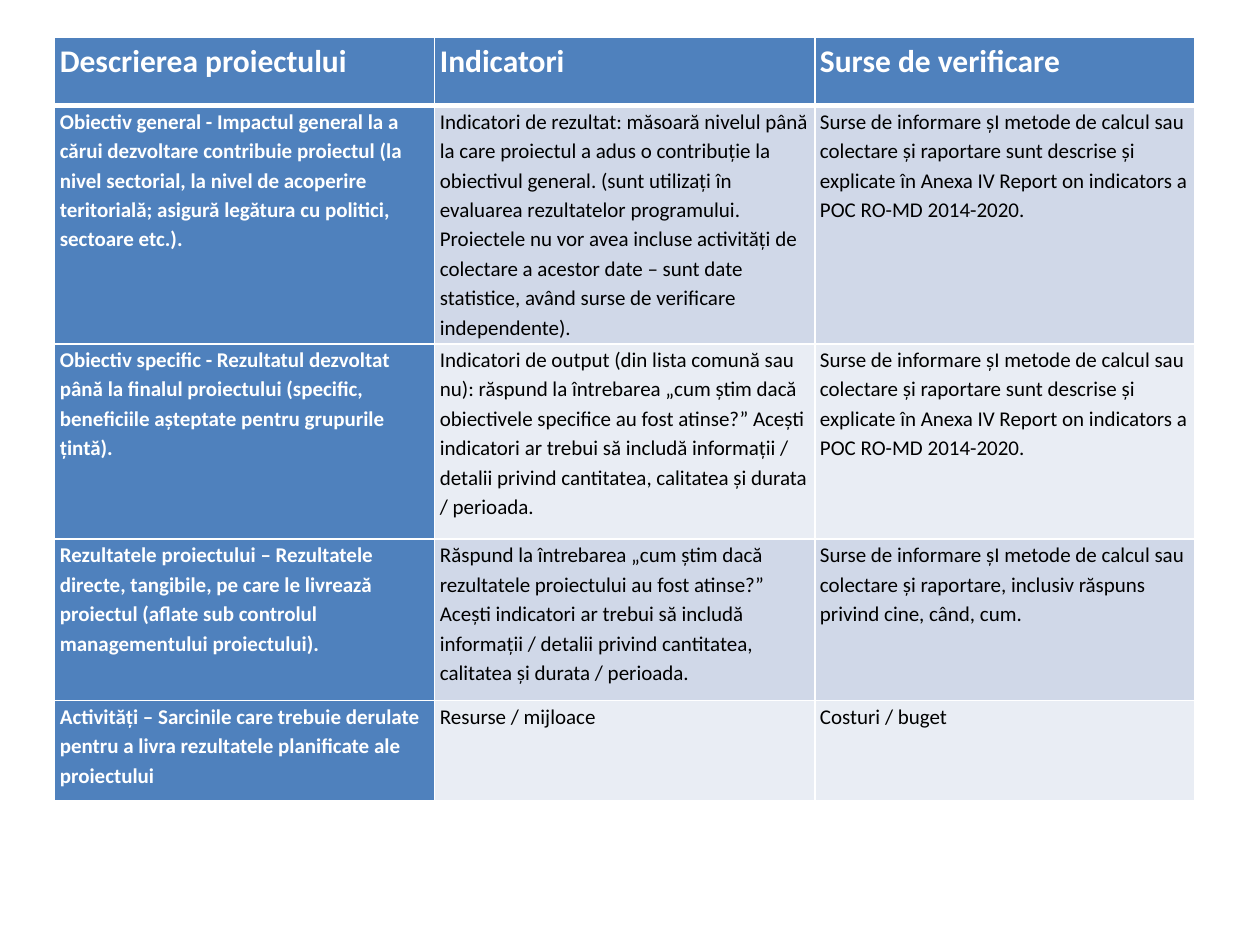
import pptx
import pptx.dml.color
import pptx.oxml
import pptx.oxml.ns
import pptx.util

Pt = pptx.util.Pt
RGBColor = pptx.dml.color.RGBColor

WHITE = RGBColor(0xFF, 0xFF, 0xFF)
BLACK = RGBColor(0x00, 0x00, 0x00)
BLUE = RGBColor(0x4F, 0x81, 0xBD)
BAND_DARK = RGBColor(0xD0, 0xD8, 0xE8)
BAND_LIGHT = RGBColor(0xE9, 0xED, 0xF4)

COLUMN_WIDTH = 217.2
ROW_HEIGHTS = [39.3, 136.2, 111.6, 92.2, 57.6]
# Cells (row, column) whose paragraph has no space after it
TIGHT_CELLS = {(1, 2), (3, 0), (4, 0)}

INDICATOR_SOURCES = (
    "Surse de informare șI metode de calcul sau colectare și raportare sunt "
    "descrise și explicate în Anexa IV Report on indicators a POC RO-MD 2014-2020."
)
ROWS = [
    ["Descrierea proiectului", "Indicatori", "Surse de verificare"],
    [
        "Obiectiv general - Impactul general la a cărui dezvoltare contribuie "
        "proiectul (la nivel sectorial, la nivel de acoperire teritorială; "
        "asigură legătura cu politici, sectoare etc.).",
        "Indicatori de rezultat: măsoară nivelul până la care proiectul a adus o "
        "contribuție la obiectivul general. (sunt utilizați în evaluarea "
        "rezultatelor programului. Proiectele nu vor avea incluse activități de "
        "colectare a acestor date – sunt date statistice, având surse de "
        "verificare independente).",
        INDICATOR_SOURCES,
    ],
    [
        "Obiectiv specific - Rezultatul dezvoltat până la finalul proiectului "
        "(specific, beneficiile așteptate pentru grupurile țintă).",
        "Indicatori de output (din lista comună sau nu): răspund la întrebarea "
        "„cum știm dacă obiectivele specifice au fost atinse?” Acești indicatori "
        "ar trebui să includă informații / detalii privind cantitatea, calitatea "
        "și durata / perioada.",
        INDICATOR_SOURCES,
    ],
    [
        "Rezultatele proiectului – Rezultatele directe, tangibile, pe care le "
        "livrează proiectul (aflate sub controlul managementului proiectului).",
        "Răspund la întrebarea „cum știm dacă rezultatele proiectului au fost "
        "atinse?” Acești indicatori ar trebui să includă informații / detalii "
        "privind cantitatea, calitatea și durata / perioada.",
        "Surse de informare șI metode de calcul sau colectare și raportare, "
        "inclusiv răspuns privind cine, când, cum.",
    ],
    [
        "Activități – Sarcinile care trebuie derulate pentru a livra rezultatele "
        "planificate ale proiectului",
        "Resurse / mijloace",
        "Costuri / buget",
    ],
]


def write_text(cell, text, *, size=12, color=BLACK, bold=False, space_after=10):
    paragraph = cell.text_frame.paragraphs[0]
    paragraph.text = text
    paragraph.line_spacing = 1.15
    paragraph.space_after = Pt(space_after)
    font = paragraph.runs[0].font
    font.name = "Calibri"
    font.size = Pt(size)
    font.color.rgb = color
    font.bold = bold


def set_borders(cell, **widths):
    """Draw white borders; the schema wants them ahead of the cell fill."""
    properties = cell._tc.get_or_add_tcPr()
    for index, (side, width) in enumerate(widths.items()):
        line = pptx.oxml.parse_xml(
            f'<a:{side} {pptx.oxml.ns.nsdecls("a")} w="{Pt(width)}">'
            f'<a:solidFill><a:srgbClr val="{WHITE}"/></a:solidFill></a:{side}>'
        )
        properties.insert(index, line)


def format_cell(cell, fill, top, bottom):
    cell.margin_left = cell.margin_right = Pt(3)
    cell.margin_top = cell.margin_bottom = Pt(0)
    cell.fill.solid()
    cell.fill.fore_color.rgb = fill
    set_borders(cell, lnL=1, lnR=1, lnT=top, lnB=bottom)


def add_project_table(slide):
    columns = len(ROWS[0])
    table = slide.shapes.add_table(
        len(ROWS), columns, Pt(31.2), Pt(21),
        Pt(COLUMN_WIDTH * columns), Pt(sum(ROW_HEIGHTS)),
    ).table
    for column in table.columns:
        column.width = Pt(COLUMN_WIDTH)
    for row_index, texts in enumerate(ROWS):
        table.rows[row_index].height = Pt(ROW_HEIGHTS[row_index])
        band = BAND_DARK if row_index % 2 else BAND_LIGHT
        for column_index, text in enumerate(texts):
            cell = table.cell(row_index, column_index)
            heading = row_index == 0 or column_index == 0
            format_cell(
                cell,
                fill=BLUE if heading else band,
                top=3 if row_index == 1 else 1,
                bottom=3 if row_index == 0 else 1,
            )
            write_text(
                cell, text,
                size=18 if row_index == 0 else 12,
                color=WHITE if heading else BLACK,
                bold=heading,
                space_after=0 if (row_index, column_index) in TIGHT_CELLS else 10,
            )


def main():
    presentation = pptx.Presentation()
    presentation.slide_width = Pt(720)
    presentation.slide_height = Pt(540)
    slide = presentation.slides.add_slide(presentation.slide_layouts[6])
    add_project_table(slide)
    presentation.save("out.pptx")


if __name__ == "__main__":
    main()
